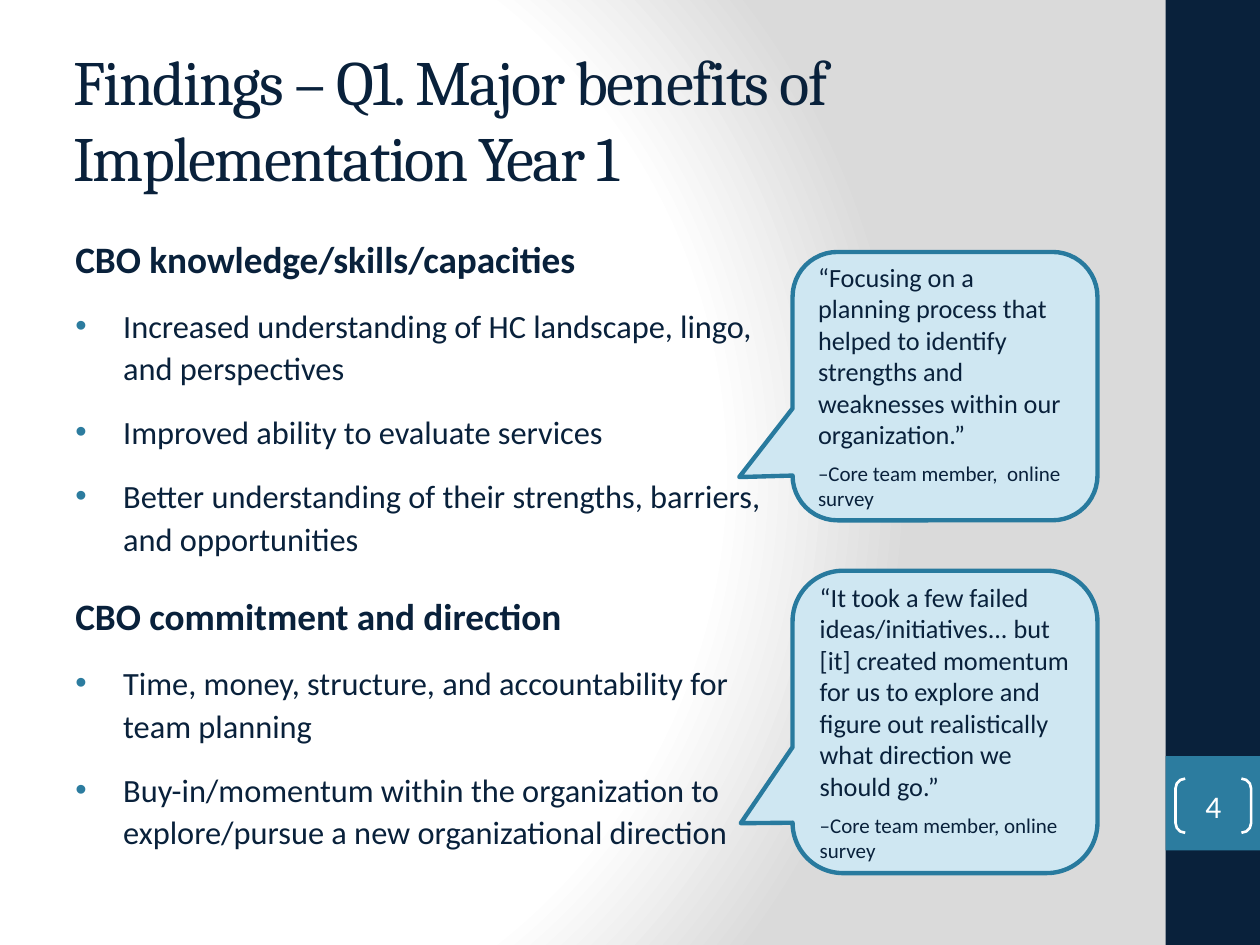
from lxml import etree
from pptx import Presentation
from pptx.dml.color import RGBColor
from pptx.enum.shapes import MSO_SHAPE
from pptx.enum.text import MSO_ANCHOR, MSO_AUTO_SIZE, PP_ALIGN
from pptx.oxml.ns import qn
from pptx.util import Inches, Pt

RECT = MSO_SHAPE.RECTANGLE
PAIR = MSO_SHAPE.DOUBLE_BRACKET
CALLOUT = MSO_SHAPE.ROUNDED_RECTANGULAR_CALLOUT
MIDDLE = MSO_ANCHOR.MIDDLE
LEFT, CENTER = PP_ALIGN.LEFT, PP_ALIGN.CENTER
NO_FIT = MSO_AUTO_SIZE.NONE

COLORS = {
    "navy": "09213B",
    "teal": "2C7C9F",
    "edge": "287A9E",
    "pale": "CFE7F2",
    "white": "FFFFFF",
    "gray": "DADADA",
}

TOPICS = [
    ("CBO knowledge/skills/capacities", [
        "Increased understanding of HC landscape, lingo, and perspectives",
        "Improved ability to evaluate services",
        "Better understanding of their strengths, barriers, and opportunities",
    ]),
    ("CBO commitment and direction", [
        "Time, money, structure, and accountability for team planning",
        "Buy-in/momentum within the organization to explore/pursue a new "
        "organizational direction",
    ]),
]

QUOTES = [
    (2, 2.13, (-0.675, 0.339, 0.167),
     "“Focusing on a planning process that helped to identify strengths and "
     "weaknesses within our organization.”",
     "–Core team member,  online survey"),
    (4.53, 2.4, (-0.67, 0.335, 0.167),
     "“It took a few failed ideas/initiatives... but [it] created momentum "
     "for us to explore and figure out realistically what direction we "
     "should go.”",
     "–Core team member, online survey"),
]


def rgb(name):
    """Return the named colour."""
    return RGBColor.from_string(COLORS[name])


def node(parent, tag, **attrs):
    """Append an XML child with attributes."""
    return etree.SubElement(parent, qn(tag), attrs)


def write(para, text, size, color="navy", font="Calibri", bold=False):
    """Add one formatted run to a paragraph."""
    run = para.add_run()
    run.text = text
    run.font.size = Pt(size)
    run.font.name = font
    run.font.bold = bold
    run.font.color.rgb = rgb(color)
    return run


def add_para(frame, first):
    """Return the first paragraph or a new one."""
    return frame.paragraphs[0] if first else frame.add_paragraph()


def add_bullet(para):
    """Give a paragraph a hanging teal bullet."""
    props = para._p.get_or_add_pPr()
    indent = Inches(0.38)
    props.set("marL", str(indent))
    props.set("indent", str(-indent))
    tint = node(props, "a:buClr")
    node(tint, "a:srgbClr", val=COLORS["teal"])
    node(props, "a:buFont", typeface="Arial")
    node(props, "a:buChar", char="•")


def add_shape(slide, kind, box, fill=None, line=None, width=1.5):
    """Add a flat preset shape."""
    shape = slide.shapes.add_shape(kind, *map(Inches, box))
    shape.shadow.inherit = False
    if fill:
        shape.fill.solid()
        shape.fill.fore_color.rgb = rgb(fill)
    else:
        shape.fill.background()
    if line:
        shape.line.color.rgb = rgb(line)
        shape.line.width = Pt(width)
    else:
        shape.line.fill.background()
    return shape


def set_back(slide):
    """Paint the radial background gradient."""
    slide.background.fill.gradient()
    grad = slide.element.find(".//" + qn("a:gradFill"))
    for child in list(grad):
        grad.remove(child)
    stops = node(grad, "a:gsLst")
    for place, name in ((0, "white"), (75, "white"), (100, "gray")):
        stop = node(stops, "a:gs", pos=str(place * 1000))
        node(stop, "a:srgbClr", val=COLORS[name])
    radial = node(grad, "a:path", path="circle")
    node(radial, "a:fillToRect", l="20000", t="50000", r="100000", b="50000")


def set_title(slide, text):
    """Place and fill the title."""
    title = slide.shapes.title
    title.left, title.top = Inches(0.48), Inches(0.25)
    title.width, title.height = Inches(8.33), Inches(1.38)
    frame = title.text_frame
    frame.auto_size = NO_FIT
    frame.vertical_anchor = MIDDLE
    para = frame.paragraphs[0]
    para.alignment = LEFT
    run = write(para, text, 36, font="Cambria")
    run.font._element.set("spc", "-100")


def add_body(slide):
    """Add the headed bullet lists."""
    box = slide.shapes.add_textbox(*map(Inches, (0.5, 1.79, 5.66, 5.28)))
    frame = box.text_frame
    frame.word_wrap = True
    for rank, (head, points) in enumerate(TOPICS):
        for step, text in enumerate([head, *points]):
            para = add_para(frame, rank == step == 0)
            para.line_spacing = 1.1
            para.space_before = Pt(12 if step else 18)
            if step:
                add_bullet(para)
            write(para, text, 18.5 if step else 21.3, bold=not step)


def add_quote(slide, top, height, adjust, quote, source):
    """Add a callout with a quote and its source."""
    shape = add_shape(slide, CALLOUT, (6.29, top, 2.42, height),
                      "pale", "edge", 2.5)
    for index, value in enumerate(adjust):
        shape.adjustments[index] = value
    frame = shape.text_frame
    frame.word_wrap = True
    frame.vertical_anchor = MIDDLE
    for text, size, gap in ((quote, 15, 0), (source, 12, 6)):
        para = add_para(frame, text == quote)
        para.alignment = LEFT
        para.space_before = Pt(gap)
        write(para, text, size)


def add_number(slide, text):
    """Add the bracketed page number."""
    shape = add_shape(slide, PAIR, (9.33, 6.18, 0.6, 0.43), line="white")
    shape.adjustments[0] = 0.179
    frame = shape.text_frame
    frame.margin_left = frame.margin_right = 0
    frame.margin_top = frame.margin_bottom = 0
    frame.vertical_anchor = MIDDLE
    para = frame.paragraphs[0]
    para.alignment = CENTER
    write(para, text, 18, "white")


def main():
    """Build and save the slide."""
    deck = Presentation()
    deck.slide_width, deck.slide_height = Inches(10), Inches(7.5)
    slide = deck.slides.add_slide(deck.slide_layouts[5])
    set_back(slide)
    add_shape(slide, RECT, (9.25, 0, 0.75, 7.5), "navy")
    add_shape(slide, RECT, (9.25, 6, 0.75, 0.75), "teal")
    set_title(slide, "Findings – Q1. Major benefits of Implementation Year 1")
    add_body(slide)
    add_number(slide, "4")
    for quote in QUOTES:
        add_quote(slide, *quote)
    deck.save("out.pptx")


if __name__ == "__main__":
    main()
